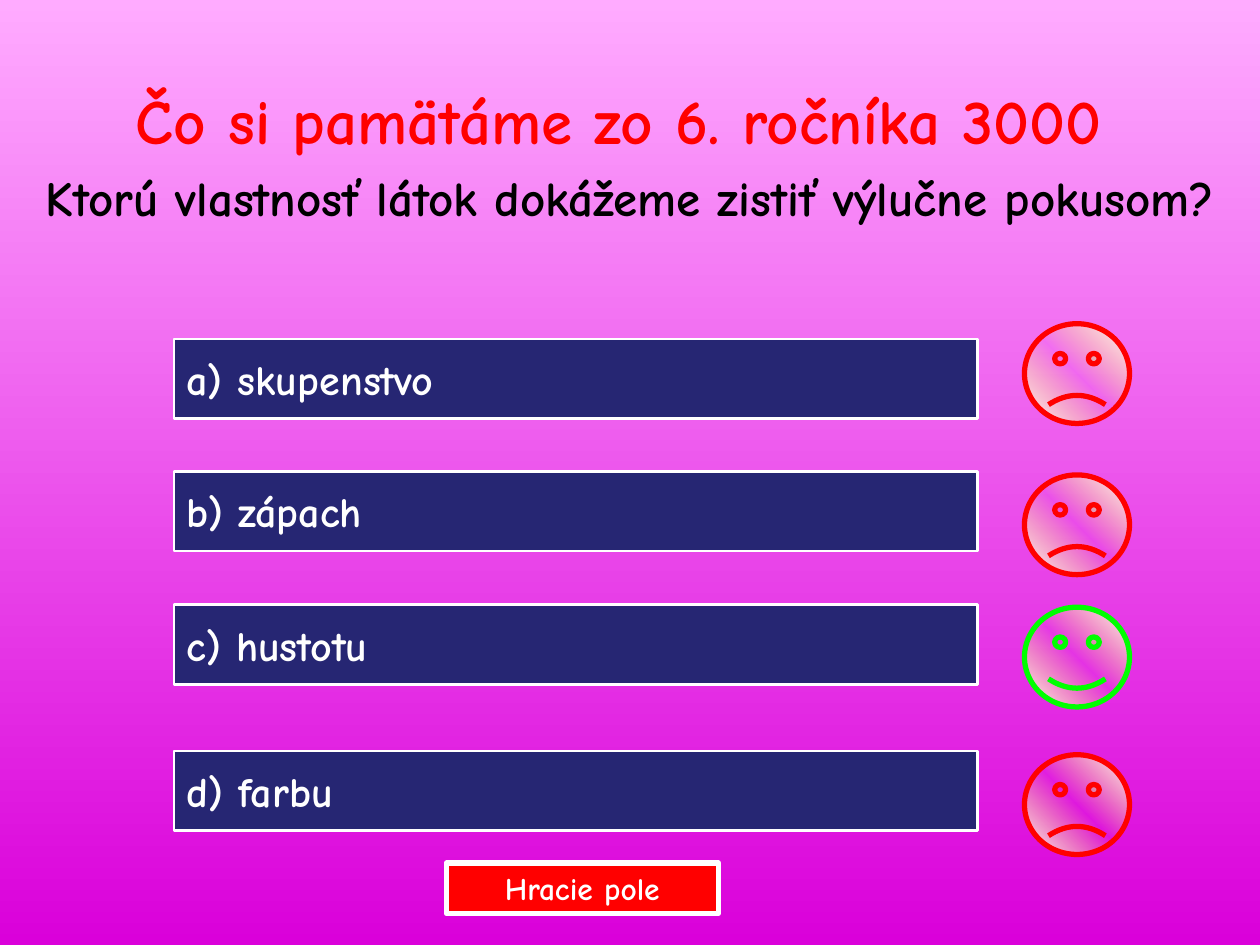
from lxml import etree
from pptx import Presentation
from pptx.dml.color import RGBColor
from pptx.enum.shapes import MSO_SHAPE
from pptx.enum.text import MSO_ANCHOR, MSO_AUTO_SIZE, PP_ALIGN
from pptx.oxml.ns import qn
from pptx.util import Pt

BUTTON = MSO_SHAPE.ACTION_BUTTON_CUSTOM
SMILEY = MSO_SHAPE.SMILEY_FACE
TOP, MIDDLE = MSO_ANCHOR.TOP, MSO_ANCHOR.MIDDLE
LEFT, CENTER = PP_ALIGN.LEFT, PP_ALIGN.CENTER
NO_FIT = MSO_AUTO_SIZE.NONE

FONT = "Comic Neue"
RED = RGBColor(0xFF, 0x00, 0x00)
GREEN = RGBColor(0x00, 0xFF, 0x00)
BLACK = RGBColor(0x00, 0x00, 0x00)
WHITE = RGBColor(0xFF, 0xFF, 0xFF)
NAVY = RGBColor(0x26, 0x26, 0x73)
YELLOW = RGBColor(0xFF, 0xFF, 0x66)
PINK = RGBColor(0xFF, 0xAB, 0xFF)
PURPLE = RGBColor(0xDA, 0x00, 0xDA)

HEADING = [
    ("Čo si pamätáme zo 6. ročníka 3000 ", 36, RED),
    ("Ktorú vlastnosť látok dokážeme zistiť výlučne pokusom?", 28, BLACK),
]
ANSWERS = [
    ("a) skupenstvo", 193.7, 185, False),
    ("b) zápach", 269.4, 271.4, False),
    ("c) hustotu", 345.6, 347, True),
    ("d) farbu", 429.1, 431.3, False),
]


def style(para, size, color, align):
    """Format a paragraph and its runs."""
    para.alignment = align
    for run in para.runs:
        font = run.font
        font.name, font.size, font.bold = FONT, Pt(size), True
        font.color.rgb = color


def shade(fill, owner, angle, stops):
    """Fill with a linear gradient of (percent, colour, alpha) stops."""
    fill.gradient()
    fill.gradient_angle = -angle % 360
    group = next(owner.iter(qn("a:gsLst")))
    for old in list(group):
        group.remove(old)
    for place, color, alpha in stops:
        stop = etree.SubElement(group, qn("a:gs"), pos=str(place * 1000))
        tint = etree.SubElement(stop, qn("a:srgbClr"), val=str(color))
        if alpha < 100:
            etree.SubElement(tint, qn("a:alpha"), val=str(alpha * 1000))


def add_head(slide):
    """Put the heading and the question in the title."""
    title = slide.shapes.title
    title.left, title.top, title.width, title.height = Pt(0), Pt(43.2), Pt(720), Pt(57)
    frame = title.text_frame
    frame.text = "\n".join(text for text, _, _ in HEADING)
    frame.word_wrap, frame.auto_size = True, NO_FIT
    frame.vertical_anchor = TOP
    for para, (_, size, color) in zip(frame.paragraphs, HEADING):
        style(para, size, color, CENTER)
        para.space_before = Pt(size * 0.2)


def add_shape(slide, kind, box, line, weight):
    """Add an outlined shape without a shadow."""
    shape = slide.shapes.add_shape(kind, *map(Pt, box))
    shape.shadow.inherit = False
    shape.line.color.rgb = line
    shape.line.width = Pt(weight)
    return shape


def add_button(slide, text, box, color, weight, size, align):
    """Add a filled button with a label."""
    button = add_shape(slide, BUTTON, box, WHITE, weight)
    button.fill.solid()
    button.fill.fore_color.rgb = color
    frame = button.text_frame
    frame.text = text
    frame.word_wrap = False
    frame.vertical_anchor = MIDDLE
    style(frame.paragraphs[0], size, WHITE, align)


def add_face(slide, top, right):
    """Add a happy green face or a sad red one."""
    face = add_shape(slide, SMILEY, (585.4, top, 60, 57), GREEN if right else RED, 3)
    face.adjustments[0] = 0.047 if right else -0.047
    stops = [(0, WHITE, 100), (50, YELLOW, 0), (100, WHITE, 100)]
    shade(face.fill, face.element, 315, stops)


def main():
    """Build the quiz slide and save it."""
    deck = Presentation()
    deck.slide_width, deck.slide_height = Pt(720), Pt(540)
    slide = deck.slides.add_slide(deck.slide_layouts[5])
    stops = [(0, PINK, 100), (100, PURPLE, 100)]
    shade(slide.background.fill, slide.element, 90, stops)
    add_head(slide)
    for text, top, face_top, right in ANSWERS:
        add_button(slide, text, (99.4, top, 459, 45.4), NAVY, 1.5, 24, LEFT)
        add_face(slide, face_top, right)
    add_button(slide, "Hracie pole", (255, 493.2, 155.5, 28.8), RED, 3, 18, CENTER)
    deck.save("out.pptx")


if __name__ == "__main__":
    main()
